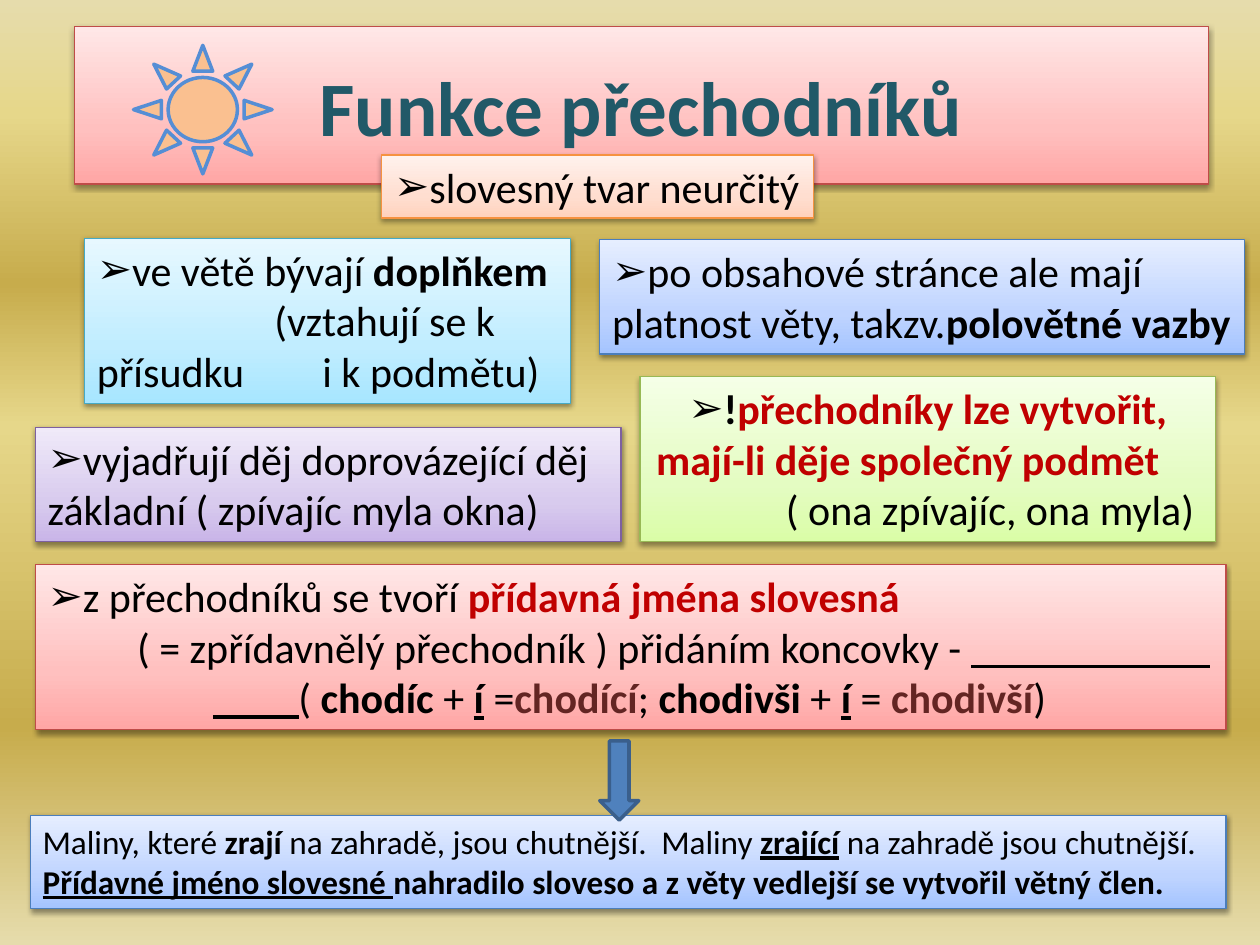
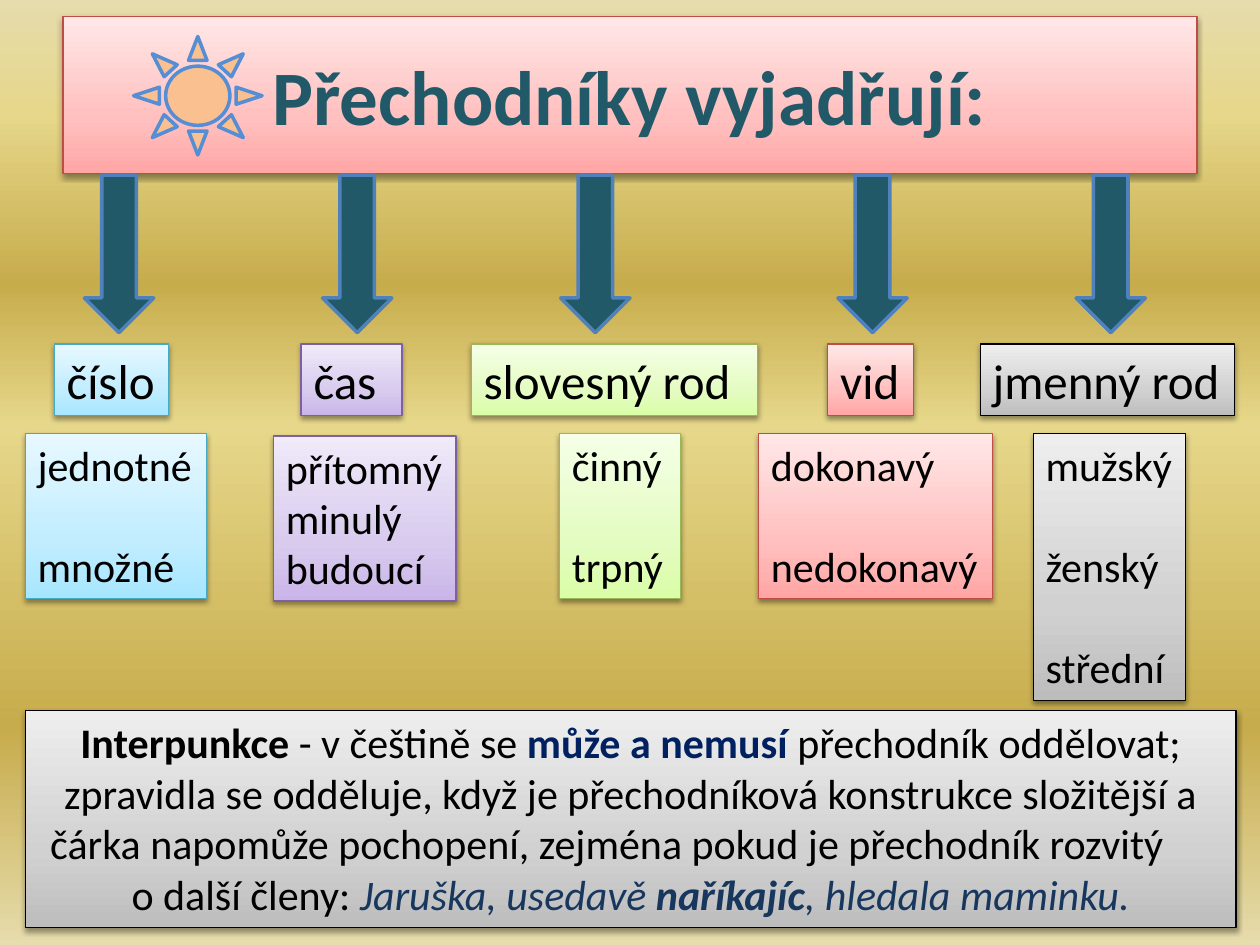
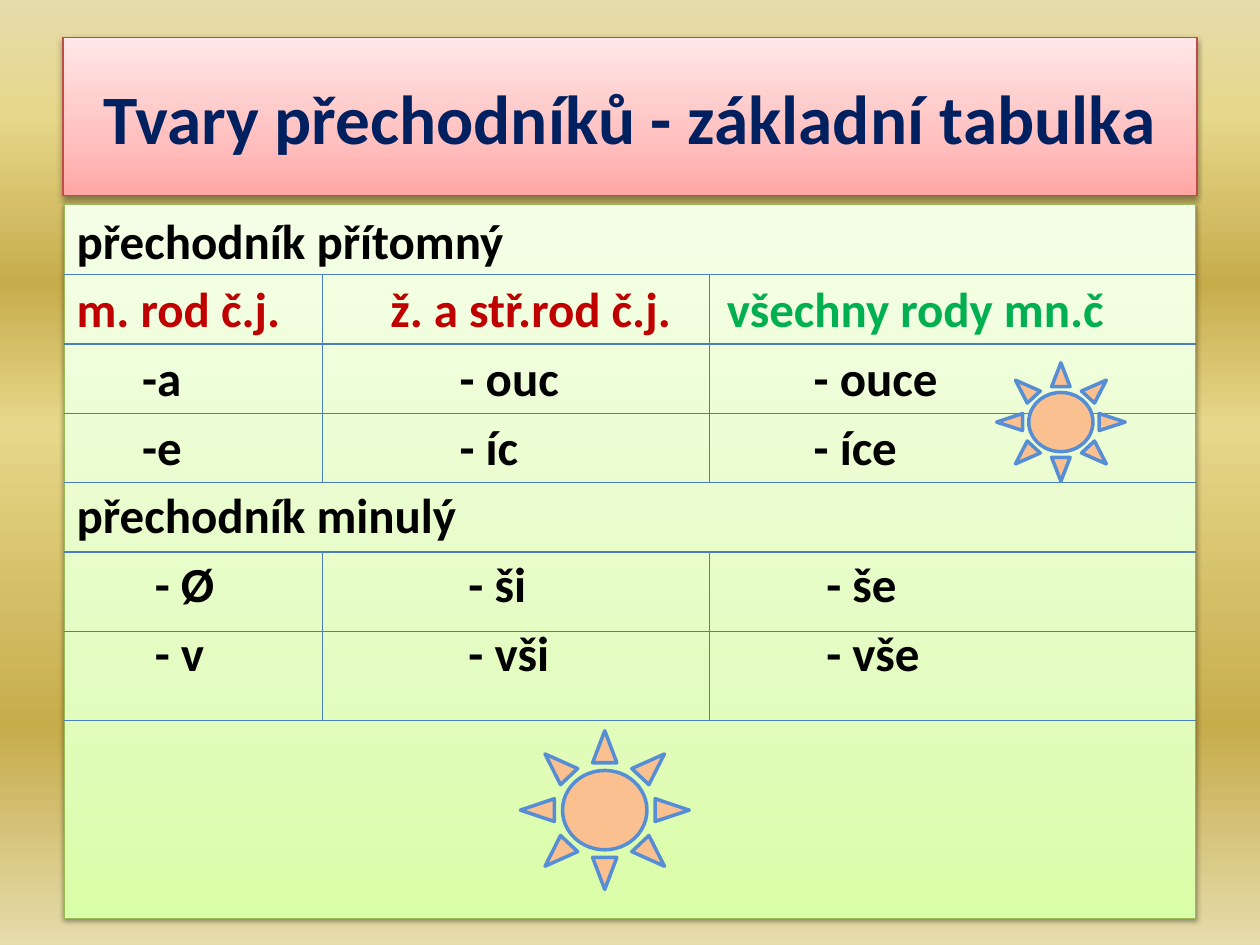
from dataclasses import dataclass, field
from typing import NamedTuple

from lxml import etree
from pptx import Presentation
from pptx import util as u
from pptx.dml.color import RGBColor
from pptx.enum import shapes, text
from pptx.oxml import ns

IN = u.Inches
MID = text.PP_ALIGN.CENTER
LEFT = text.PP_ALIGN.LEFT


class Tone(NamedTuple):
    low: str
    mid: str
    high: str
    edge: str


@dataclass(frozen=True)
class Theme:
    font: str = "Calibri"
    ink: str = "000000"
    teal: str = "215968"
    navy: str = "002060"
    red: str = "C00000"
    brown: str = "632523"
    green: str = "00B050"
    deep: str = "17375E"
    steel: str = "4F81BD"
    edge: str = "3A5F8C"
    rule: str = "4B7EBC"
    sun: str = "FAC090"
    ray: str = "558ED5"
    title: float = 44
    long: float = 39.6
    head: float = 28
    body: float = 24
    note: float = 19
    gap: float = 28.8
    row: float = 5.6
    thin: float = 0.75
    thick: float = 2
    gold: tuple = ((0, "E6DCAC"), (12, "E6D78A"), (30, "C7AC4C"),
                   (45, "E6D78A"), (77, "C7AC4C"), (100, "E6DCAC"))
    rose: Tone = Tone("FFA6A5", "FFC0BF", "FFE7E7", "BF4C48")
    peach: Tone = Tone("FFD2BD", "FFDED0", "FFF2ED", "F69240")
    aqua: Tone = Tone("A7E6FF", "C1EDFF", "E7F8FF", "46AAC5")
    lilac: Tone = Tone("C9B5E8", "D8CBEE", "F0EAF9", "7D60A0")
    lime: Tone = Tone("DAFDA7", "E4FCC2", "F5FFE7", "98B955")
    blue: Tone = Tone("A4C4FF", "BFD4FF", "E6EEFF", "4B7EBC")
    grey: Tone = Tone("BDBDBD", "D1D1D1", "EEEEEE", "000000")


T = Theme()


class Bit(NamedTuple):
    text: str
    bold: bool = False
    color: str = T.ink
    under: bool = False
    slant: bool = False


@dataclass
class Para:
    bits: list[Bit]
    align: text.PP_ALIGN = LEFT
    mark: bool = False
    tabs: tuple = ()
    indent: float = 0
    before: float = 0


@dataclass
class Box:
    at: tuple
    tone: Tone
    paras: list[Para] = field(default_factory=list)
    size: float = T.body
    anchor: text.MSO_ANCHOR = text.MSO_ANCHOR.TOP
    tight: bool = False


class Group(NamedTuple):
    tone: Tone
    arrow: float
    name: str
    head: tuple
    kinds: list[str]
    list_at: tuple
    gap: float


def child(parent, tag: str, **attrs):
    return etree.SubElement(parent, ns.qn(tag), {k: str(v) for k, v in attrs.items()})


def blend(fill, root, stops, angle: float) -> None:
    fill.gradient()
    fill.gradient_angle = angle
    stop_list = next(root.iter(ns.qn("a:gsLst")))
    for old in list(stop_list):
        stop_list.remove(old)
    for pos, color in stops:
        child(child(stop_list, "a:gs", pos=pos * 1000), "a:srgbClr", val=color)


def write(par, words: str, *, size: float, bold: bool = False, color: str = T.ink,
          under: bool = False, slant: bool = False) -> None:
    run = par.add_run()
    run.text = words
    font = run.font
    font.name, font.size = T.font, u.Pt(size)
    font.bold, font.italic, font.underline = bold, slant, under
    font.color.rgb = RGBColor.from_string(color)


def fill_para(par, para: Para, size: float) -> None:
    par.alignment = para.align
    par.space_before = u.Pt(para.before)
    props = par._p.get_or_add_pPr()
    if para.indent:
        props.set("marL", str(IN(para.indent)))
    if para.mark:
        child(props, "a:buFont", typeface=T.font)
        child(props, "a:buChar", char="➢")
    if para.tabs:
        stops = child(props, "a:tabLst")
        for pos in para.tabs:
            child(stops, "a:tab", pos=IN(pos), algn="l")
    for bit in para.bits:
        write(par, bit.text, size=size, bold=bit.bold, color=bit.color,
              under=bit.under, slant=bit.slant)


def draw_shape(slide, kind, at: tuple, edge: str, width: float):
    shape = slide.shapes.add_shape(kind, *map(IN, at))
    shape.shadow.inherit = False
    shape.line.color.rgb = RGBColor.from_string(edge)
    shape.line.width = u.Pt(width)
    return shape


def draw_flat(slide, kind, at: tuple, fill: str, edge: str) -> None:
    shape = draw_shape(slide, kind, at, edge, T.thick)
    shape.fill.solid()
    shape.fill.fore_color.rgb = RGBColor.from_string(fill)


def draw_sun(slide, *at: float) -> None:
    draw_flat(slide, shapes.MSO_SHAPE.SUN, at, T.sun, T.ray)


def draw_box(slide, box: Box) -> None:
    tone = box.tone
    shape = draw_shape(slide, shapes.MSO_SHAPE.RECTANGLE, box.at, tone.edge, T.thin)
    blend(shape.fill, shape.element, zip((0, 35, 100), tone[:3]), 90)
    glow = child(shape.element.spPr.find(ns.qn("a:effectLst")), "a:outerShdw",
                 blurRad=u.Pt(3.1), dist=u.Pt(1.6), dir=5400000, rotWithShape=0)
    child(child(glow, "a:srgbClr", val=T.ink), "a:alpha", val=38000)
    frame = shape.text_frame
    frame.word_wrap = True
    frame.vertical_anchor = box.anchor
    if box.tight:
        frame.margin_right = 0
    for i, para in enumerate(box.paras):
        par = frame.add_paragraph() if i else frame.paragraphs[0]
        fill_para(par, para, box.size)


def draw_line(slide, x1: float, y1: float, x2: float, y2: float,
              color: str = T.rule, width: float = T.thin) -> None:
    line = slide.shapes.add_connector(shapes.MSO_CONNECTOR.STRAIGHT,
                                      *map(IN, (x1, y1, x2, y2)))
    line.line.color.rgb = RGBColor.from_string(color)
    line.line.width = u.Pt(width)
    child(line.element.spPr, "a:effectLst")


def start(deck, title: str, left: float, top: float, color: str = T.teal,
          size: float = T.title):
    slide = deck.slides.add_slide(deck.slide_layouts[6])
    blend(slide.background.fill, slide.element, T.gold, 270)
    draw_box(slide, Box((left, top, 9, 1.25), T.rose,
                        [Para([Bit(title, True, color)], MID)], size,
                        text.MSO_ANCHOR.MIDDLE))
    return slide


def build_use(deck) -> None:
    slide = start(deck, "Funkce přechodníků", 0.59, 0.21)
    boxes = [
        Box((3.03, 1.23, 3.43, 0.5), T.peach,
            [Para([Bit("slovesný tvar neurčitý")], mark=True)], tight=True),
        Box((0.67, 1.89, 3.86, 1.31), T.aqua, [
            Para([Bit("ve větě bývají "), Bit("doplňkem", True)], mark=True),
            Para([Bit("(vztahují se k")], indent=1.41),
            Para([Bit("přísudku\ti k podmětu)")], tabs=(1.79,))]),
        Box((0.28, 3.39, 4.65, 0.91), T.lilac, [
            Para([Bit("vyjadřují děj doprovázející děj základní ( zpívajíc myla okna)")],
                 mark=True)]),
        Box((5.08, 2.99, 4.57, 1.31), T.lime, [
            Para([Bit("!", True), Bit("přechodníky lze vytvořit,", True, T.red)],
                 MID, mark=True),
            Para([Bit("mají-li děje společný podmět", True, T.red)], indent=0.03),
            Para([Bit("( ona zpívajíc, ona myla)")], indent=1.06)]),
        Box((0.28, 4.48, 9.45, 1.31), T.rose, [
            Para([Bit("z přechodníků se tvoří "),
                  Bit("přídavná jména slovesná", True, T.red)], mark=True),
            Para([Bit("( = zpřídavnělý přechodník ) přidáním koncovky -")],
                 indent=0.71),
            Para([Bit("( "), Bit("chodíc ", True), Bit("+ "),
                  Bit("í", True, under=True), Bit(" ="),
                  Bit("chodící", True, T.brown), Bit("; "),
                  Bit("chodivši", True), Bit(" + "), Bit("í", True, under=True),
                  Bit(" = "), Bit("chodivší", True, T.brown), Bit(")")],
                 indent=1.99)]),
        Box((0.24, 6.47, 9.49, 0.74), T.blue, [
            Para([Bit("Maliny, které "), Bit("zrají", True),
                  Bit(" na zahradě, jsou chutnější.\tMaliny "),
                  Bit("zrající", True, under=True),
                  Bit(" na zahradě jsou chutnější.")], tabs=(4.91,)),
            Para([Bit("Přídavné jméno slovesné ", True, under=True),
                  Bit("nahradilo sloveso a z věty vedlejší se vytvořil větný člen.",
                      True)])], T.note),
        Box((4.76, 1.9, 5.12, 0.91), T.blue, [
            Para([Bit("po obsahové stránce ale mají platnost věty, takzv."),
                  Bit("polovětné vazby", True)], mark=True)], tight=True),
    ]
    for box in boxes:
        draw_box(slide, box)
    for left, right, y in ((7.71, 9.6, 5.29), (1.69, 2.37, 5.69)):
        draw_line(slide, left, y, right, y, T.ink, T.thick)
    draw_sun(slide, 1.06, 0.36, 1.1, 1.02)
    draw_flat(slide, shapes.MSO_SHAPE.DOWN_ARROW, (4.76, 5.88, 0.31, 0.63),
              T.steel, T.edge)


def build_kinds(deck) -> None:
    slide = start(deck, "Přechodníky vyjadřují:", 0.5, 0.13)
    groups = [
        Group(T.aqua, 0.67, "číslo", (0.43, 0.91), ["jednotné", "množné"],
              (0.2, 3.44, 1.44, 1.31), T.gap),
        Group(T.lilac, 2.56, "čas", (2.39, 0.8), ["přítomný", "minulý", "budoucí"],
              (2.17, 3.46, 1.45, 1.31), 0),
        Group(T.lime, 4.45, "slovesný rod", (3.74, 2.27), ["činný", "trpný"],
              (4.44, 3.44, 0.96, 1.31), T.gap),
        Group(T.rose, 6.65, "vid", (6.57, 0.68), ["dokonavý", "nedokonavý"],
              (6.02, 3.44, 1.86, 1.31), T.gap),
        Group(T.grey, 8.54, "jmenný rod", (7.78, 2.02), ["mužský", "ženský", "střední"],
              (8.2, 3.44, 1.21, 2.12), T.gap),
    ]
    for group in groups:
        left, width = group.head
        draw_flat(slide, shapes.MSO_SHAPE.DOWN_ARROW, (group.arrow, 1.39, 0.55, 1.25),
                  T.teal, T.steel)
        draw_box(slide, Box((left, 2.73, width, 0.57), group.tone,
                            [Para([Bit(group.name)])], T.head, tight=True))
        paras = [Para([Bit(kind)], before=group.gap if i else 0)
                 for i, kind in enumerate(group.kinds)]
        draw_box(slide, Box(group.list_at, group.tone, paras, tight=True))
    draw_sun(slide, 1.06, 0.29, 1.02, 0.94)
    draw_box(slide, Box((0.2, 5.64, 9.61, 1.72), T.grey, [
        Para([Bit("Interpunkce ", True), Bit("- v češtině se "),
              Bit("může a nemusí ", True, T.navy),
              Bit("přechodník oddělovat; zpravidla se odděluje, "
                  "když je přechodníková konstrukce složitější a")], MID),
        Para([Bit("čárka napomůže pochopení, zejména pokud je přechodník rozvitý")],
             indent=0.1),
        Para([Bit("o další členy: "),
              Bit("Jaruška, usedavě ", color=T.deep, slant=True),
              Bit("naříkajíc", True, T.deep, slant=True),
              Bit(", hledala maminku.", color=T.deep, slant=True)], MID)]))


def build_forms(deck) -> None:
    slide = start(deck, "Tvary přechodníků - základní tabulka", 0.5, 0.3,
                  T.navy, T.long)
    now, past = (0.52, 3.04, 5.85), (0.62, 3.11, 5.95)
    rows = [
        ([Bit("přechodník přítomný", True)], ()),
        ([Bit("m. rod č.j.\tž. a stř.rod č.j.\t", True, T.red),
          Bit("všechny rody mn.č", True, T.green)], (2.49, 5.16)),
        ([Bit("\t-a\t- ouc\t- ouce", True)], now),
        ([Bit("\t-e\t- íc\t- íce", True)], now),
        ([Bit("přechodník minulý", True)], ()),
        ([Bit("\t- Ø\t- ši\t- še", True)], past),
        ([Bit("\t- v\t- vši\t- vše", True)], past),
    ]
    left, right = 0.51, 9.49
    draw_box(slide, Box((left, 1.62, right - left, 5.67), T.lime,
                        [Para(bits, tabs=tabs, before=T.row) for bits, tabs in rows],
                        T.head))
    levels = [2.18 + 0.55 * i for i in range(5)] + [5.01, 5.72]
    for y in levels:
        draw_line(slide, left, y, right, y)
    for x in (2.56, 5.63):
        draw_line(slide, x, levels[0], x, levels[3])
        draw_line(slide, x, levels[4], x, levels[-1])
    draw_sun(slide, 4.13, 5.8, 1.34, 1.26)
    draw_sun(slide, 7.91, 2.88, 1.02, 0.94)


def main() -> None:
    deck = Presentation()
    deck.slide_width, deck.slide_height = IN(10), IN(7.5)
    for build in (build_use, build_kinds, build_forms):
        build(deck)
    deck.save("out.pptx")


if __name__ == "__main__":
    main()
